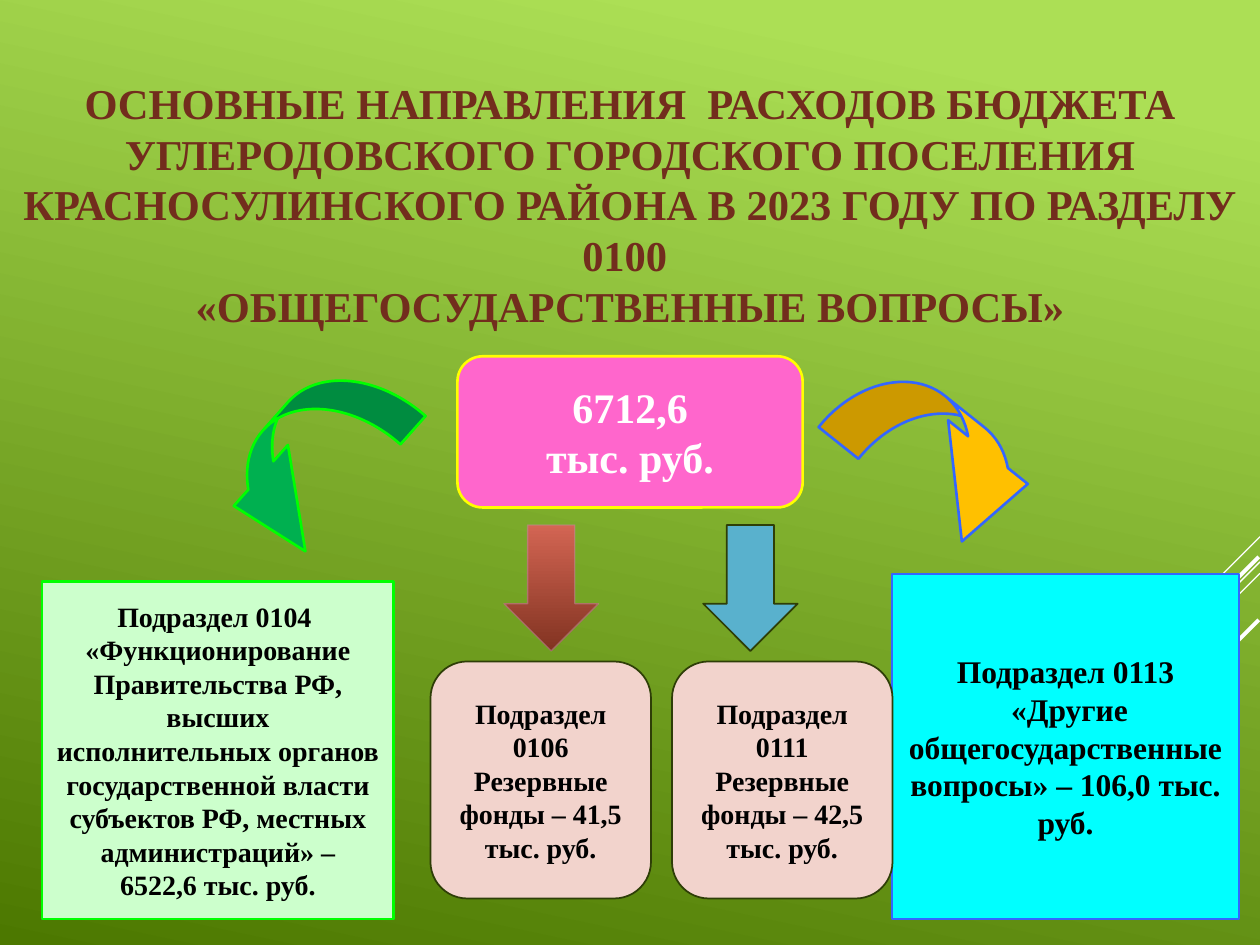
from dataclasses import dataclass

from lxml.etree import SubElement
from pptx import Presentation
from pptx.dml.color import RGBColor
from pptx.enum.shapes import MSO_CONNECTOR as Connector, MSO_SHAPE as Shape
from pptx.enum.text import MSO_ANCHOR as Anchor, MSO_AUTO_SIZE as AutoSize, PP_ALIGN as Align
from pptx.oxml.ns import qn
from pptx.util import Pt

FONT = "Times New Roman"
WHITE, BLACK, OLIVE = "FFFFFF", "000000", "2E3E07"


@dataclass
class Figure:
    kind: Shape
    area: tuple[float, float, float, float]
    fill: str | tuple[str, str]
    line: str
    line_width: float = 1.5
    line_opacity: int = 100
    rotation: float = 0
    adjustments: tuple[float, ...] = ()
    text: str = ""
    size: float = 16
    text_color: str = BLACK
    insets: tuple[float, float] = (7.2, 3.6)


@dataclass
class Stripe:
    right: float
    top: float
    length: float
    width: float


def rgb(color: str) -> RGBColor:
    return RGBColor.from_string(color)


def set_gradient(fill, colors: tuple[str, str], clockwise: float, start: float = 0) -> None:
    fill.gradient()
    fill.gradient_angle = 360 - clockwise
    for stop, color, position in zip(fill.gradient_stops, colors, (start, 1)):
        stop.color.rgb = rgb(color)
        stop.position = position


def set_text(frame, text: str, size: float, color: str) -> None:
    frame.text = text
    frame.word_wrap = True
    for para in frame.paragraphs:
        para.alignment = Align.CENTER
        for span in para.runs:
            span.font.name = FONT
            span.font.size = Pt(size)
            span.font.bold = True
            span.font.color.rgb = rgb(color)


def draw_stripe(page, stripe: Stripe) -> None:
    """Draw a line falling to the left at 45 degrees."""
    line = page.shapes.add_connector(
        Connector.STRAIGHT, Pt(stripe.right), Pt(stripe.top),
        Pt(stripe.right - stripe.length), Pt(stripe.top + stripe.length))
    line.line.color.rgb = rgb(WHITE)
    line.line.width = Pt(stripe.width)
    SubElement(line._element.spPr, qn("a:effectLst"))


def draw_figure(page, figure: Figure) -> None:
    box = page.shapes.add_shape(figure.kind, *map(Pt, figure.area))
    box.shadow.inherit = False
    box.rotation = figure.rotation
    for index, value in enumerate(figure.adjustments):
        box.adjustments[index] = value
    if isinstance(figure.fill, tuple):
        set_gradient(box.fill, figure.fill, 90)
    else:
        box.fill.solid()
        box.fill.fore_color.rgb = rgb(figure.fill)
    box.line.color.rgb = rgb(figure.line)
    box.line.width = Pt(figure.line_width)
    if figure.line_opacity < 100:
        color = box._element.spPr.find(f"{qn('a:ln')}//{qn('a:srgbClr')}")
        SubElement(color, qn("a:alpha")).set("val", str(figure.line_opacity * 1000))
    if figure.text:
        frame = box.text_frame
        set_text(frame, figure.text, figure.size, figure.text_color)
        frame.vertical_anchor = Anchor.MIDDLE
        frame.margin_left = frame.margin_right = Pt(figure.insets[0])
        frame.margin_top = frame.margin_bottom = Pt(figure.insets[1])


def reserve_fund(left: float, section: str, amount: str) -> Figure:
    return Figure(Shape.ROUNDED_RECTANGLE, (left, 378, 126, 135.4), "F2D3CC", OLIVE, 1,
                  text=f"Подраздел {section}\nРезервные фонды – {amount} тыс. руб.")


STRIPES = [
    Stripe(720, 306.7, 59.8, 0.75),
    Stripe(720, 321.1, 194.8, 0.75),
    Stripe(720, 327.6, 123.8, 0.75),
    Stripe(719.3, 318.2, 113, 2.25),
    Stripe(719.3, 354.2, 82, 2.25),
]

FIGURES = [
    Figure(Shape.ROUNDED_RECTANGLE, (261.4, 203.6, 197.3, 86.4), "FF66CC", "FFFF00",
           adjustments=(0.167,), text="6712,6\nтыс. руб.", size=24,
           text_color=WHITE, insets=(10, 3.6)),
    Figure(Shape.RECTANGLE, (24, 332.4, 201, 192.8), "CCFFCC", "00FF00",
           text="Подраздел 0104 \n«Функционирование Правительства РФ, высших "
                "исполнительных органов государственной власти субъектов РФ, "
                "местных администраций» –\n6522,6 тыс. руб.",
           insets=(8.5, 0)),
    Figure(Shape.RECTANGLE, (509.8, 328, 198.2, 197.2), "00FFFF", "3366FF",
           text="Подраздел 0113\n «Другие общегосударственные вопросы» – 106,0 тыс. руб.",
           size=18, insets=(8.5, 0)),
    Figure(Shape.CURVED_DOWN_ARROW, (471.6, 233.3, 133.9, 59), "FFC000", "3366FF",
           rotation=38.6, adjustments=(0.493, 0.988, 0.834)),
    Figure(Shape.CURVED_UP_ARROW, (113.8, 231.8, 126.7, 64.1), "00B050", "00FF00",
           rotation=131.6, adjustments=(0.338, 0.727, 0.747)),
    Figure(Shape.DOWN_ARROW, (401.8, 300, 54, 72), "59B1CD", OLIVE, 1),
    reserve_fund(246, "0106", "41,5"),
    reserve_fund(384, "0111", "42,5"),
    Figure(Shape.DOWN_ARROW, (288, 300, 54, 72), ("D36553", "823321"), "B88F8C", 0.75,
           line_opacity=60),
]


def main() -> None:
    deck = Presentation()
    deck.slide_width, deck.slide_height = Pt(720), Pt(540)
    page = deck.slides.add_slide(deck.slide_layouts[5])
    set_gradient(page.background.fill, ("ACDF55", "4C7800"), 102, start=0.1)

    title = page.shapes.title
    title.left, title.top, title.width, title.height = map(Pt, (0, 0.7, 720, 101.5))
    frame = title.text_frame
    set_text(frame, "ОСНОВНЫЕ НАПРАВЛЕНИЯ  РАСХОДОВ БЮДЖЕТА УГЛЕРОДОВСКОГО ГОРОДСКОГО "
                    "ПОСЕЛЕНИЯ КРАСНОСУЛИНСКОГО РАЙОНА В 2023 ГОДУ ПО РАЗДЕЛУ 0100 "
                    "\v«ОБЩЕГОСУДАРСТВЕННЫЕ ВОПРОСЫ»", 24.3, "722D1D")
    frame.auto_size = AutoSize.NONE
    frame.vertical_anchor = Anchor.TOP
    frame.margin_top = Pt(43)

    for stripe in STRIPES:
        draw_stripe(page, stripe)
    for figure in FIGURES:
        draw_figure(page, figure)
    deck.save("out.pptx")


if __name__ == "__main__":
    main()
